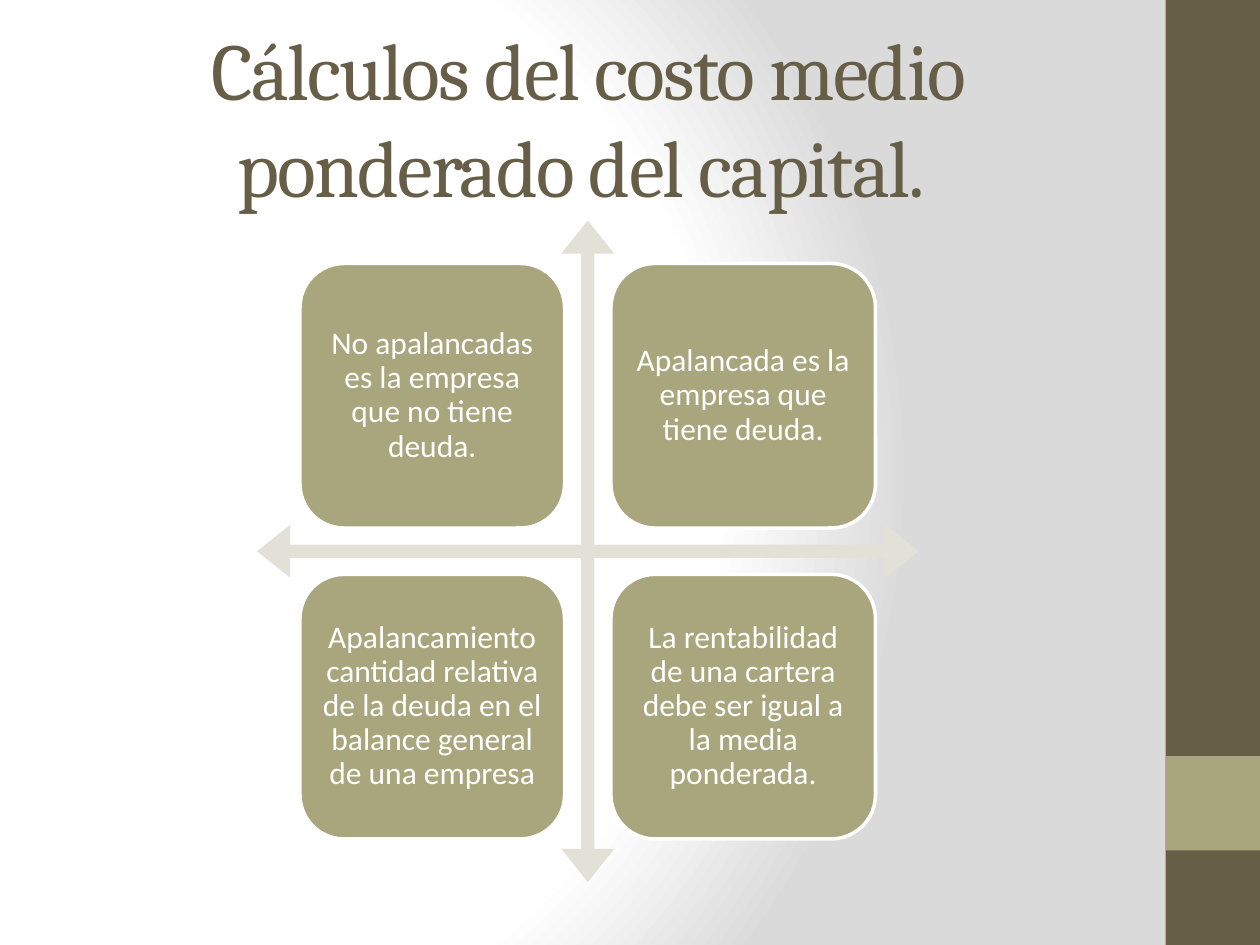
from pptx import Presentation
from pptx import util as u
from pptx.dml.color import RGBColor
from pptx.enum import shapes, text
from pptx.oxml import parse_xml
from pptx.oxml.ns import nsdecls, qn

COLORS = {"bark": "675E47", "olive": "A9A57C", "mist": "E2E1D7",
          "white": "FFFFFF", "silver": "DADADA"}
COLUMNS, ROWS = 40, 30
KINDS = shapes.MSO_SHAPE


class Deck:
    title_format = {"name": "Cambria", "size": u.Pt(46)}
    card_format = {"name": "Calibri", "size": u.Pt(18)}

    def __init__(self, width, height):
        self.prs = Presentation()
        self.prs.slide_width, self.prs.slide_height = u.Inches(width), u.Inches(height)
        self.slide = self.prs.slides.add_slide(self.prs.slide_layouts[6])

    def place(self, column, row, columns, rows):
        across = self.prs.slide_width / COLUMNS
        down = self.prs.slide_height / ROWS
        return [round(n) for n in (column * across, row * down, columns * across, rows * down)]

    def background(self, stops, focus):
        self.slide.background.fill.solid()
        marks = "".join(f'<a:gs pos="{at * 1000}"><a:srgbClr val="{COLORS[color]}"/></a:gs>'
                        for at, color in stops)
        sides = " ".join(f'{side}="{share * 1000}"' for side, share in zip("ltrb", focus))
        gradient = parse_xml(
            f'<a:gradFill {nsdecls("a")} rotWithShape="1"><a:gsLst>{marks}</a:gsLst>'
            f'<a:path path="circle"><a:fillToRect {sides}/></a:path></a:gradFill>')
        solid = self.slide.element.find(".//" + qn("p:bgPr") + "/" + qn("a:solidFill"))
        solid.getparent().replace(solid, gradient)

    def block(self, kind, area, color, border=None, adjustments=()):
        block = self.slide.shapes.add_shape(kind, *self.place(*area))
        block.shadow.inherit = False
        block.fill.solid()
        block.fill.fore_color.rgb = RGBColor.from_string(COLORS[color])
        if border:
            block.line.color.rgb = RGBColor.from_string(COLORS[border])
            block.line.width = u.Pt(2)
        else:
            block.line.fill.background()
        for index, value in enumerate(adjustments):
            block.adjustments[index] = value
        return block

    def wording(self, frame, words, style, color, inset, spacing=None):
        layout = {"word_wrap": True, "vertical_anchor": text.MSO_ANCHOR.MIDDLE}
        layout.update({f"margin_{side}": u.Inches(inset)
                       for side in ("left", "right", "top", "bottom")})
        for name, value in layout.items():
            setattr(frame, name, value)
        paragraph = frame.paragraphs[0]
        paragraph.alignment = text.PP_ALIGN.CENTER
        paragraph.line_spacing = spacing
        run = paragraph.add_run()
        run.text = words
        for name, value in style.items():
            setattr(run.font, name, value)
        run.font.color.rgb = RGBColor.from_string(COLORS[color])
        return run

    def title(self, words, area):
        heading = self.slide.shapes.add_textbox(*self.place(*area))
        run = self.wording(heading.text_frame, words, self.title_format, "bark", 0.05)
        run.font._element.set("spc", "-100")

    def card(self, words, area):
        card = self.block(KINDS.ROUNDED_RECTANGLE, area, "olive", "white")
        self.wording(card.text_frame, words, self.card_format, "white", 0.07, 0.9)


def main():
    deck = Deck(10, 7.5)
    deck.background([(0, "white"), (75, "white"), (100, "silver")], (20, 50, 100, 50))
    deck.block(KINDS.RECTANGLE, (37, 0, 3, ROWS), "bark")
    deck.block(KINDS.RECTANGLE, (37, 24, 3, 3), "olive")
    deck.title("Cálculos del costo medio ponderado del capital. ", (2, 1.2, 33.32, 5))

    left, top, span = 8.16, 7, 21
    deck.block(KINDS.QUAD_ARROW, (left, top, span, span), "mist",
               adjustments=(0.02, 0.04, 0.05))
    quadrants = [
        "No apalancadas es la empresa que no tiene deuda.",
        "Apalancada es la empresa que tiene deuda.",
        "Apalancamiento cantidad relativa de la deuda en el balance general de una empresa",
        "La rentabilidad de una cartera debe ser igual a la media ponderada.",
    ]
    side, margin, step = 0.4 * span, 0.065 * span, 0.47 * span
    for index, words in enumerate(quadrants):
        row, column = divmod(index, 2)
        deck.card(words, (left + margin + column * step, top + margin + row * step, side, side))
    deck.prs.save("out.pptx")


if __name__ == "__main__":
    main()
